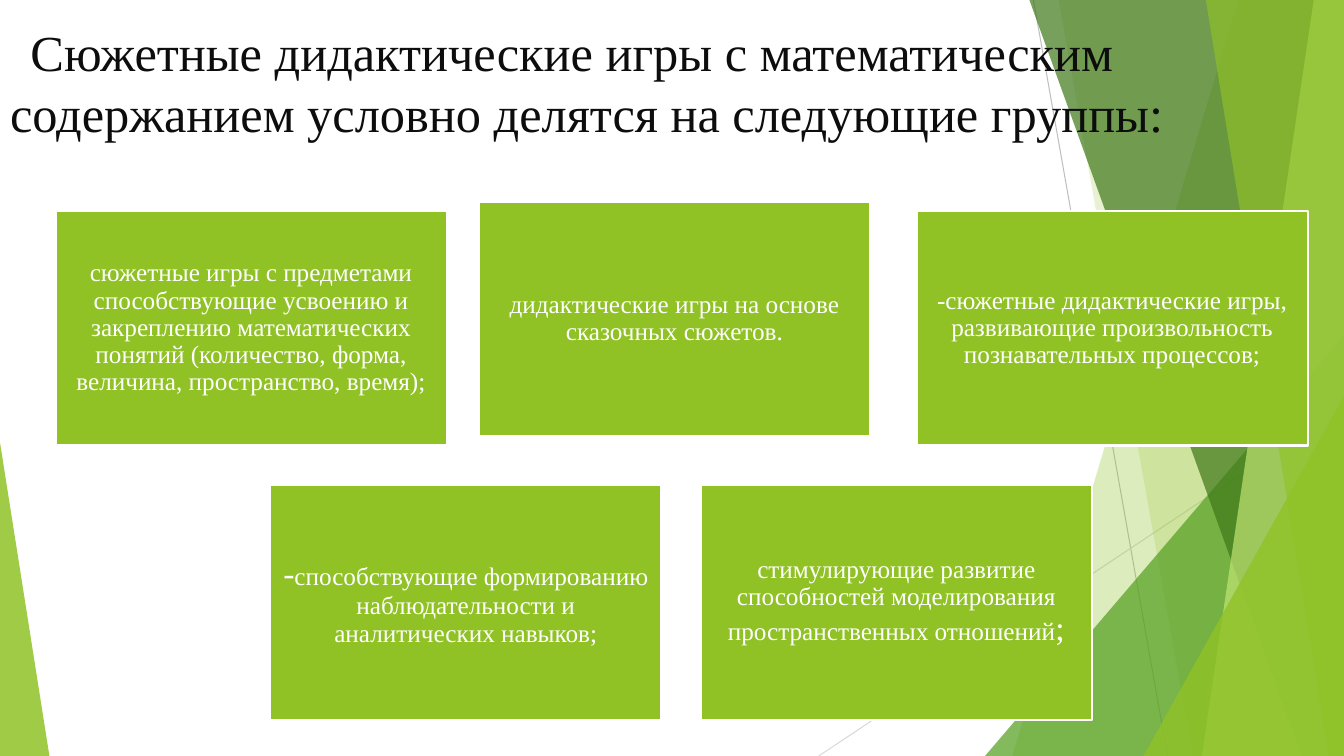
"""Build a slide listing five groups of story-based didactic games."""
import lxml.etree
import pptx
import pptx.dml.color
import pptx.enum.shapes
import pptx.enum.text
import pptx.oxml.ns
import pptx.util

Inches = pptx.util.Inches
ANCHOR = pptx.enum.text.MSO_ANCHOR
ALIGN = pptx.enum.text.PP_ALIGN
SHAPE = pptx.enum.shapes.MSO_SHAPE

COLORS = {
    "lime": "90C226", "green": "54A021", "forest": "3F7819", "pale": "C0E474",
    "grey": "BFBFBF", "light_grey": "D9D9D9", "ink": "0D0D0D", "white": "FFFFFF",
}
SERIF = "Times New Roman"
WIDTH, HEIGHT = 13.33, 7.5

TITLE = [
    ("\u00a0 ", 32.4, "Cabin", "lime"),
    ("Сюжетные дидактические игры с математическим содержанием\u00a0"
     "условно делятся на следующие группы:", 36, SERIF, "ink"),
]

CARD_SIZE = (3.88, 2.33)
GROUPS = [
    (0.55, 2.09, 0.07, [("сюжетные игры с предметами способствующие усвоению и закреплению "
                         "математических понятий (количество, форма, величина, "
                         "пространство, время);", 18)]),
    (4.75, 2, 0.07, [("дидактические игры на основе сказочных сюжетов.", 18)]),
    (9.09, 2.09, 0.07, [("-сюжетные дидактические игры, развивающие произвольность "
                         "познавательных процессов;", 18)]),
    (2.68, 4.81, 0.1, [("-", 24), ("способствующие формированию наблюдательности и "
                                   "аналитических навыков;", 18)]),
    (6.95, 4.81, 0.07, [("стимулирующие развитие способностей моделирования "
                         "пространственных отношений", 18), (";", 24)]),
]

RAYS = [
    ((10.25, 0), (11.58, HEIGHT), "grey"),
    ((WIDTH, 4.03), (8.12, HEIGHT), "light_grey"),
]
FACETS = [
    ("band", 12.28, 10.04, "lime", 30),
    ("band", 10.5, 11.83, "lime", 20),
    ("triangle", (9.77, 3.33, 3.56, 4.17), 1, "green", 72),
    ("band", 10.21, 12.91, "forest", 70),
    ("band", 13.03, 11.92, "pale", 70),
    ("band", 11.96, 13.18, "lime", 65),
    ("triangle", (11.34, 3.93, 1.99, 3.57), 1, "lime", 80),
    ("triangle", (0, 4.39, 0.49, 3.11), 0, "lime", 85),
]


def rgb(name):
    return pptx.dml.color.RGBColor.from_string(COLORS[name])


def write(frame, runs, align, anchor, inset=(0.1, 0.05), spacing=1.0):
    frame.word_wrap = True
    frame.auto_size = pptx.enum.text.MSO_AUTO_SIZE.NONE
    frame.vertical_anchor = anchor
    frame.margin_left = frame.margin_right = Inches(inset[0])
    frame.margin_top = frame.margin_bottom = Inches(inset[1])
    paragraph = frame.paragraphs[0]
    paragraph.alignment = align
    paragraph.line_spacing = spacing
    for text, size, font, color in runs:
        run = paragraph.add_run()
        run.text = text
        run.font.size = pptx.util.Pt(size)
        run.font.name = font
        run.font.color.rgb = rgb(color)


def paint(shape, color, opacity=100):
    shape.shadow.inherit = False
    shape.fill.solid()
    shape.fill.fore_color.rgb = rgb(color)
    shape.line.fill.background()
    if opacity < 100:
        fill = shape.element.spPr.find(pptx.oxml.ns.qn("a:solidFill"))
        alpha = lxml.etree.SubElement(fill[0], pptx.oxml.ns.qn("a:alpha"))
        alpha.set("val", str(opacity * 1000))


def add_ray(shapes, start, end, color):
    ray = shapes.add_connector(pptx.enum.shapes.MSO_CONNECTOR.STRAIGHT,
                               *map(Inches, start + end))
    ray.line.color.rgb = rgb(color)
    ray.line.width = pptx.util.Pt(0.75)
    lxml.etree.SubElement(ray.element.spPr, pptx.oxml.ns.qn("a:effectLst"))


def add_band(shapes, top_x, bottom_x, color, opacity):
    outline = shapes.build_freeform(Inches(top_x), 0)
    corners = [(WIDTH, 0), (WIDTH, HEIGHT), (bottom_x, HEIGHT)]
    outline.add_line_segments([(Inches(x), Inches(y)) for x, y in corners], close=True)
    paint(outline.convert_to_shape(), color, opacity)


def add_triangle(shapes, box, apex, color, opacity):
    triangle = shapes.add_shape(SHAPE.ISOSCELES_TRIANGLE, *map(Inches, box))
    triangle.adjustments[0] = apex
    paint(triangle, color, opacity)


def add_card(shapes, left, top, inset, runs):
    card = shapes.add_shape(SHAPE.RECTANGLE, *map(Inches, (left, top) + CARD_SIZE))
    paint(card, "lime")
    card.line.color.rgb = rgb("white")
    card.line.width = pptx.util.Pt(1.5)
    styled = [(text, size, SERIF, "white") for text, size in runs]
    write(card.text_frame, styled, ALIGN.CENTER, ANCHOR.MIDDLE, (inset, inset), 0.9)


def main():
    deck = pptx.Presentation()
    deck.slide_width, deck.slide_height = Inches(WIDTH), Inches(HEIGHT)
    slide = deck.slides.add_slide(deck.slide_layouts[5])
    shapes = slide.shapes
    for ray in RAYS:
        add_ray(shapes, *ray)
    builders = {"band": add_band, "triangle": add_triangle}
    for kind, *facet in FACETS:
        builders[kind](shapes, *facet)

    title = shapes.title
    title.element.getparent().append(title.element)
    title.left, title.top, title.width, title.height = map(Inches, (0, 0.16, 12.11, 1.45))
    write(title.text_frame, TITLE, ALIGN.LEFT, ANCHOR.TOP)

    for group in GROUPS:
        add_card(shapes, *group)
    deck.save("out.pptx")


if __name__ == "__main__":
    main()
